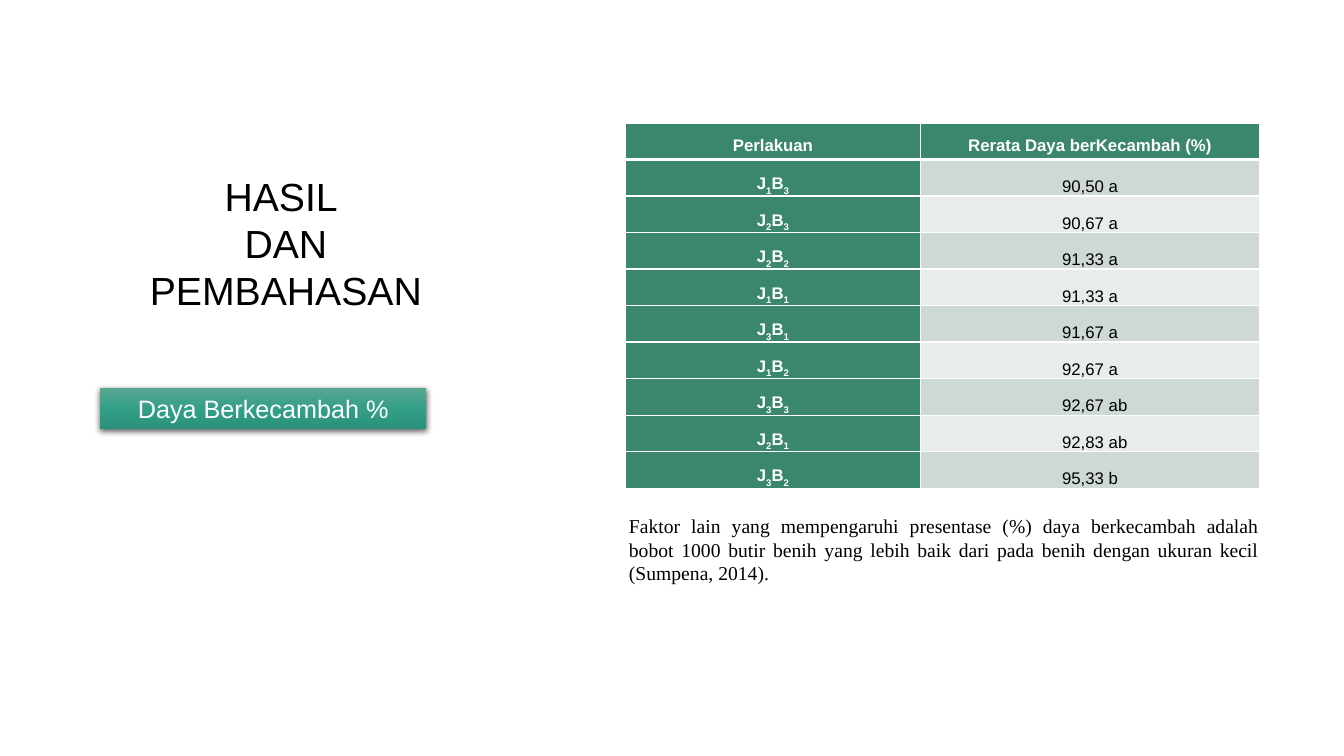
from dataclasses import dataclass

from lxml.etree import SubElement
from pptx import Presentation
from pptx.dml.color import RGBColor
from pptx.enum.shapes import MSO_SHAPE
from pptx.enum.text import MSO_ANCHOR as Anchor, MSO_AUTO_SIZE as AutoSize, PP_ALIGN as Align
from pptx.oxml import parse_xml
from pptx.oxml.ns import nsdecls, qn
from pptx.util import Cm, Pt


@dataclass(frozen=True)
class Theme:
    sans: str = "Arial"
    serif: str = "Times New Roman"
    title_size: int = 28
    label_size: int = 18
    note_size: int = 14
    table_size: int = 12
    dark: str = "000000"
    light: str = "FFFFFF"
    header: str = "3A876B"
    bands: tuple = ("CED9D4", "E8EDEB")
    gradient: tuple = ((0, "59A792"), (50, "349F87"), (100, "2A917A"))


class SlideBuilder:
    def __init__(self, slide, theme):
        self.slide = slide
        self.theme = theme

    def add_span(self, para, text, size, color, font=None, bold=False, subscript=False):
        span = para.add_run()
        span.text = text
        span.font.name = font or self.theme.sans
        span.font.size = Pt(size)
        span.font.bold = bold
        span.font.color.rgb = RGBColor.from_string(color)
        if subscript:
            span.font._element.set("baseline", "-25000")

    def write_lines(self, frame, lines, size, color, align=Align.CENTER, font=None):
        frame.word_wrap = True
        frame.auto_size = AutoSize.SHAPE_TO_FIT_TEXT
        for index, line in enumerate(lines):
            para = frame.add_paragraph() if index else frame.paragraphs[0]
            para.alignment = align
            self.add_span(para, line, size, color, font)

    def add_text(self, area, lines, size, align=Align.CENTER, font=None):
        box = self.slide.shapes.add_textbox(*map(Cm, area))
        self.write_lines(box.text_frame, lines, size, self.theme.dark, align, font)

    def add_label(self, area, text):
        """Add a rectangle with a vertical gradient and a soft shadow below it."""
        box = self.slide.shapes.add_shape(MSO_SHAPE.RECTANGLE, *map(Cm, area))
        box.line.fill.background()
        box.shadow.inherit = False
        properties = box._element.spPr
        stops = "".join(
            f'<a:gs pos="{place * 1000}"><a:srgbClr val="{color}"/></a:gs>'
            for place, color in self.theme.gradient
        )
        properties.find(qn("a:prstGeom")).addnext(parse_xml(
            f'<a:gradFill {nsdecls("a")} rotWithShape="1"><a:gsLst>{stops}</a:gsLst>'
            '<a:lin ang="5400000" scaled="0"/></a:gradFill>'
        ))
        properties.find(qn("a:effectLst")).append(parse_xml(
            f'<a:outerShdw {nsdecls("a")} blurRad="{Pt(4.5)}" dist="{Pt(1.5)}" dir="5400000" '
            'algn="ctr" rotWithShape="0"><a:srgbClr val="000000"><a:alpha val="63000"/>'
            '</a:srgbClr></a:outerShdw>'
        ))
        self.write_lines(box.text_frame, [text], self.theme.label_size, self.theme.light)

    def set_borders(self, cell, top, bottom):
        properties = cell._tc.get_or_add_tcPr()
        for index, (side, width) in enumerate(zip("LRTB", (1, 1, top, bottom))):
            line = SubElement(properties, qn(f"a:ln{side}"), w=str(Pt(width)))
            fill = SubElement(line, qn("a:solidFill"))
            SubElement(fill, qn("a:srgbClr"), val=self.theme.light)
            properties.insert(index, line)

    def prepare_cell(self, cell, fill, anchor, top=1, bottom=1):
        """Style an empty cell and return its centred paragraph."""
        cell.fill.solid()
        cell.fill.fore_color.rgb = RGBColor.from_string(fill)
        self.set_borders(cell, top, bottom)
        cell.vertical_anchor = anchor
        cell.margin_left = cell.margin_right = Cm(0.18)
        cell.margin_top = cell.margin_bottom = 0
        para = cell.text_frame.paragraphs[0]
        para.alignment = Align.CENTER
        para.line_spacing = 1.5
        return para

    def add_results(self, left, top, widths, row_height, headings, results):
        theme = self.theme
        count = len(results) + 1
        frame = self.slide.shapes.add_table(
            count, len(widths), Cm(left), Cm(top), Cm(sum(widths)), Cm(row_height * count)
        )
        table = frame.table
        table.horz_banding = False
        for column, width in zip(table.columns, widths):
            column.width = Cm(width)
        for row in table.rows:
            row.height = Cm(row_height)
        for column, heading in enumerate(headings):
            para = self.prepare_cell(table.cell(0, column), theme.header, Anchor.MIDDLE, bottom=3)
            self.add_span(para, heading, theme.table_size, theme.light, bold=True)
        for row, (treatment, value) in enumerate(results, 1):
            upper = 3 if row == 1 else 1
            para = self.prepare_cell(table.cell(row, 0), theme.header, Anchor.BOTTOM, upper)
            for mark in treatment:
                self.add_span(para, mark, theme.table_size, theme.light,
                              bold=True, subscript=mark.isdigit())
            cell = table.cell(row, 1)
            band = theme.bands[(row - 1) % 2]
            para = self.prepare_cell(cell, band, Anchor.BOTTOM, upper)
            if value.endswith("ab"):
                cell.margin_left = Cm(0.42)
            self.add_span(para, value, theme.table_size, theme.dark)


RESULTS = [
    ("J1B3", "90,50 a"),
    ("J2B3", "90,67 a"),
    ("J2B2", "91,33 a"),
    ("J1B1", "91,33 a"),
    ("J3B1", "91,67 a"),
    ("J1B2", "92,67 a"),
    ("J3B3", "92,67 ab"),
    ("J2B1", "92,83 ab"),
    ("J3B2", "95,33 b"),
]
NOTE = (
    "Faktor lain yang mempengaruhi presentase (%) daya berkecambah adalah bobot 1000 butir "
    "benih yang lebih baik dari pada benih dengan ukuran kecil (Sumpena, 2014)."
)


def main():
    deck = Presentation()
    deck.slide_width, deck.slide_height = Cm(33.87), Cm(19.05)
    theme = Theme()
    page = SlideBuilder(deck.slides.add_slide(deck.slide_layouts[6]), theme)
    page.add_label((2.52, 9.78, 8.23, 1.03), "Daya Berkecambah %")
    page.add_text((3.23, 4.22, 7.95, 3.84), ["HASIL ", "DAN", "PEMBAHASAN"], theme.title_size)
    page.add_text((15.6, 12.83, 16.38, 2.82), [NOTE], theme.note_size, Align.JUSTIFY, theme.serif)
    page.add_results(15.77, 3.1, (7.42, 8.56), 0.92,
                     ("Perlakuan", "Rerata Daya berKecambah (%)"), RESULTS)
    deck.save("out.pptx")


if __name__ == "__main__":
    main()
